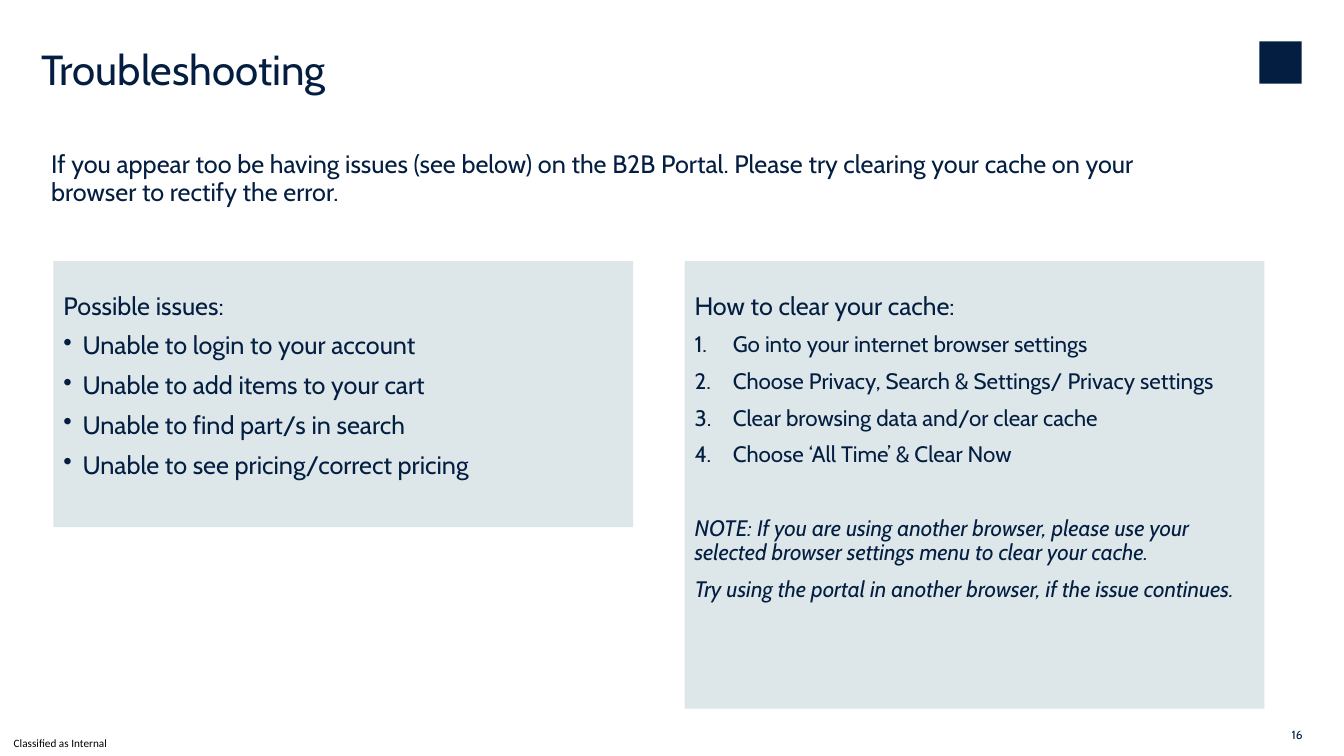
from lxml import etree
from pptx import Presentation
from pptx.dml.color import RGBColor
from pptx.enum.shapes import MSO_SHAPE
from pptx.enum.text import MSO_ANCHOR, PP_ALIGN
from pptx.oxml.ns import qn
from pptx.util import Emu, Pt

RECTANGLE = MSO_SHAPE.RECTANGLE
TOP, MIDDLE = MSO_ANCHOR.TOP, MSO_ANCHOR.MIDDLE
LEFT, CENTER, RIGHT = PP_ALIGN.LEFT, PP_ALIGN.CENTER, PP_ALIGN.RIGHT

NAVY, PALE, BLACK = "041E41", "DDE7EA", "000000"
BULLET = ("a:buChar", {"char": "•"}, 19)
NUMBER = ("a:buAutoNum", {"type": "arabicPeriod"}, 38)


def px(length):
    return Emu(length * 9144)


def color(hex_value):
    return RGBColor.from_string(hex_value)


def assign(target, values):
    for key, value in values.items():
        setattr(target, key, value)


class SlideBuilder:
    font_name = "Cabin"

    def __init__(self, slide):
        self.slide = slide

    def paragraph(self, frame, text, size, first=False, marker=None, before=9,
                  align=LEFT, spacing=0.9, ink=NAVY, font=None, italic=False):
        para = frame.paragraphs[0] if first else frame.add_paragraph()
        if marker:
            tag, attributes, indent = marker
            properties = para._p.get_or_add_pPr()
            properties.set("marL", str(px(indent)))
            properties.set("indent", str(-px(indent)))
            etree.SubElement(properties, qn(tag), attributes)
        assign(para, {"alignment": align, "line_spacing": spacing,
                      "space_before": Pt(0 if first else before)})
        run = para.add_run()
        run.text = text
        assign(run.font, {"name": font or self.font_name, "size": Pt(size),
                          "italic": italic})
        run.font.color.rgb = color(ink)

    def frame(self, shape, anchor=TOP, inset_x=0, inset_top=0):
        frame = shape.text_frame
        assign(frame, {"word_wrap": True, "vertical_anchor": anchor,
                       "margin_left": px(inset_x), "margin_right": px(inset_x),
                       "margin_top": px(inset_top), "margin_bottom": 0})
        return frame

    def text(self, box, text, size, anchor=TOP, inset_x=0, inset_top=0, **style):
        shape = self.slide.shapes.add_textbox(*map(px, box))
        frame = self.frame(shape, anchor, inset_x, inset_top)
        self.paragraph(frame, text, size, first=True, **style)

    def block(self, box, fill):
        shape = self.slide.shapes.add_shape(RECTANGLE, *map(px, box))
        shape.shadow.inherit = False
        shape.fill.solid()
        shape.fill.fore_color.rgb = color(fill)
        shape.line.fill.background()
        return shape

    def panel(self, box, heading, items, marker, size):
        frame = self.frame(self.block(box, PALE), inset_x=10, inset_top=32)
        self.paragraph(frame, heading, 18, first=True)
        for item in items:
            self.paragraph(frame, item, size, marker=marker)
        return frame


def main():
    deck = Presentation()
    assign(deck, {"slide_width": px(1333), "slide_height": px(750)})
    page = SlideBuilder(deck.slides.add_slide(deck.slide_layouts[6]))

    # Emblem and footer
    page.block((1249, 41, 42, 42), NAVY)
    page.text((0, 725, 120, 25), "Classified as Internal", 8, anchor=MIDDLE,
              align=CENTER, spacing=1.0, ink=BLACK, font="Calibri")
    page.text((993, 721, 299, 16), "16", 8.5, anchor=MIDDLE, align=RIGHT,
              spacing=1.0)

    # Title and introduction
    page.text((41, 49, 1070, 89), "Troubleshooting", 30)
    page.text((41, 146, 1150, 80),
              "If you appear too be having issues (see below) on the B2B Portal. "
              "Please try clearing your cache on your browser to rectify the error.",
              18, inset_x=10, inset_top=5)

    # Issues and remedy, side by side
    page.panel((53, 259, 575, 264), "Possible issues:", [
        "Unable to login to your account",
        "Unable to add items to your cart",
        "Unable to find part/s in search",
        "Unable to see pricing/correct pricing",
    ], BULLET, 18)
    remedy = page.panel((679, 259, 575, 444), "How to clear your cache:", [
        "Go into your internet browser settings",
        "Choose Privacy, Search & Settings/ Privacy settings",
        "Clear browsing data and/or clear cache",
        "Choose ‘All Time’ & Clear Now",
    ], NUMBER, 16)

    # Closing note, set apart from the steps
    page.paragraph(remedy, "NOTE: If you are using another browser, please use your "
                   "selected browser settings menu to clear your cache.",
                   16, before=35.5, italic=True)
    page.paragraph(remedy, "Try using the portal in another browser, "
                   "if the issue continues.", 16, italic=True)

    deck.save("out.pptx")


if __name__ == "__main__":
    main()
